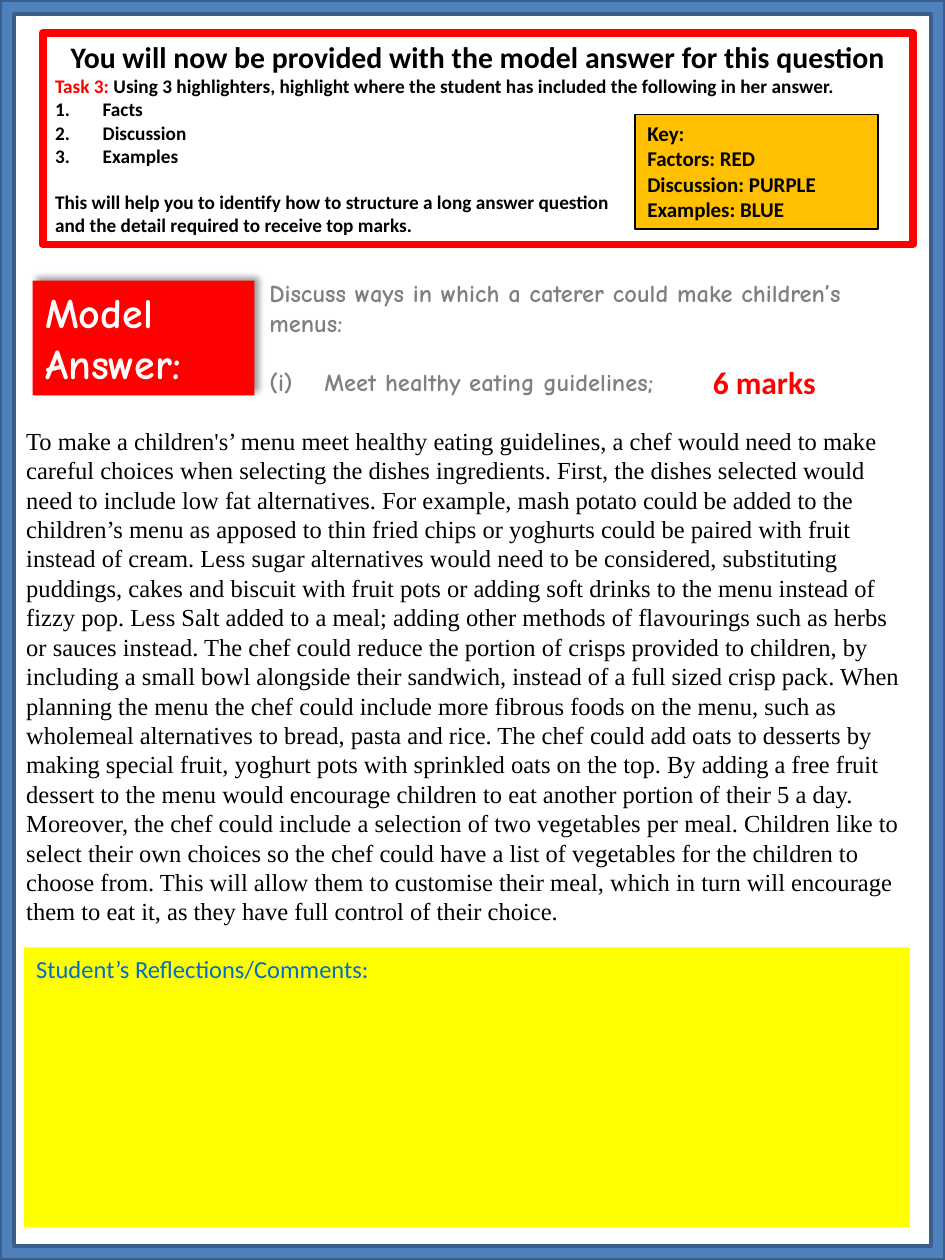
from lxml import etree
from pptx import Presentation
from pptx.dml.color import RGBColor
from pptx.enum.shapes import MSO_SHAPE
from pptx.enum.text import MSO_ANCHOR, PP_ALIGN
from pptx.oxml.ns import qn
from pptx.util import Cm, Pt

RECT, FRAME = MSO_SHAPE.RECTANGLE, MSO_SHAPE.FRAME
TOP = MSO_ANCHOR.TOP
LEFT, CENTER = PP_ALIGN.LEFT, PP_ALIGN.CENTER

BLACK = RGBColor(0x00, 0x00, 0x00)
WHITE = RGBColor(0xFF, 0xFF, 0xFF)
RED = RGBColor(0xFF, 0x00, 0x00)
GREY = RGBColor(0x80, 0x80, 0x80)
AMBER = RGBColor(0xFF, 0xC0, 0x00)
YELLOW = RGBColor(0xFF, 0xFF, 0x00)
BLUE = RGBColor(0x00, 0x70, 0xC0)
FRAME_FILL = RGBColor(0x4F, 0x81, 0xBD)
FRAME_LINE = RGBColor(0x3A, 0x5F, 0x8C)

prs = Presentation()
prs.slide_width, prs.slide_height = Cm(19.05), Cm(25.4)
s = prs.slides.add_slide(prs.slide_layouts[6])


def add_box(box, fill=None, line=None, line_width=0, kind=RECT):
    sp = s.shapes.add_shape(kind, *[Cm(v) for v in box])
    sp.shadow.inherit = False
    if fill is None:
        sp.fill.background()
    else:
        sp.fill.solid()
        sp.fill.fore_color.rgb = fill
    if line is None:
        sp.line.fill.background()
    else:
        sp.line.color.rgb = line
        sp.line.width = Pt(line_width)
    return sp


def write(sp, paragraphs, font, size, color, bold=False):
    """Each paragraph is a dict: text or runs, and optional formats."""
    tf = sp.text_frame
    tf.word_wrap = True
    tf.vertical_anchor = TOP
    for i, item in enumerate(paragraphs):
        p = tf.paragraphs[0] if i == 0 else tf.add_paragraph()
        p.alignment = item.get("align", LEFT)
        p.space_before = Pt(item.get("before", 0))
        if "number" in item:
            pPr = p._p.get_or_add_pPr()
            pPr.set("marL", str(item["indent"]))
            pPr.set("indent", str(-item["indent"]))
            etree.SubElement(pPr, qn("a:buFont"), typeface="+mj-lt")
            etree.SubElement(pPr, qn("a:buAutoNum"), type=item["number"])
        for text, run_color in item.get("runs") or [(item["text"], color)]:
            r = p.add_run()
            r.text = text
            r.font.color.rgb = run_color
            formats = {"name": font, "size": Pt(item.get("size", size)), "bold": bold}
            for name, value in formats.items():
                setattr(r.font, name, value)


# Model answer heading with a soft shadow to the upper right
sp = add_box((0.66, 5.66, 4.47, 2.31), RED)
shadow = etree.SubElement(sp._element.spPr.find(qn("a:effectLst")), qn("a:outerShdw"),
                          blurRad=str(Pt(4)), dist=str(Pt(3)), dir="18900000",
                          algn="bl", rotWithShape="0")
shadow_color = etree.SubElement(shadow, qn("a:srgbClr"), val=str(BLACK))
etree.SubElement(shadow_color, qn("a:alpha"), val="40000")
write(sp, [{"text": "Model Answer:"}], "Comic Neue", 24, WHITE, True)

# Exam question
sp = s.shapes.add_textbox(Cm(5.18), Cm(5.49), Cm(13.13), Cm(2.64))
write(sp, [
    {"text": "Discuss ways in which a caterer could make children’s menus:"},
    {"text": "Meet healthy eating guidelines;", "before": 17,
     "number": "romanLcParenBoth", "indent": Cm(1.11)},
], "Comic Neue", 14, GREY, True)

# Marks available
sp = s.shapes.add_textbox(Cm(14.12), Cm(7.19), Cm(3.23), Cm(1.02))
write(sp, [{"text": "6 marks"}], "Calibri", 18, RED, True)

# Student's answer, one sentence per entry
sentences = [
    "To make a children's’ menu meet healthy eating guidelines, a chef would need to make "
    "careful choices when selecting the dishes ingredients.",
    "First, the dishes selected would need to include low fat alternatives.",
    "For example, mash potato could be added to the children’s menu as apposed to thin fried "
    "chips or yoghurts could be paired with fruit instead of cream.",
    "Less sugar alternatives would need to be considered, substituting puddings, cakes and "
    "biscuit with fruit pots or adding soft drinks to the menu instead of fizzy pop.",
    "Less Salt added to a meal; adding other methods of flavourings such as herbs or sauces "
    "instead.",
    "The chef could reduce the portion of crisps provided to children, by including a small "
    "bowl alongside their sandwich, instead of a full sized crisp pack.",
    "When planning the menu the chef could include more fibrous foods on the menu, such as "
    "wholemeal alternatives to bread, pasta and rice.",
    "The chef could add oats to desserts by making special fruit, yoghurt pots with sprinkled "
    "oats on the top.",
    "By adding a free fruit dessert to the menu would encourage children to eat another "
    "portion of their 5 a day.",
    "Moreover, the chef could include a selection of two vegetables per meal.",
    "Children like to select their own choices so the chef could have a list of vegetables "
    "for the children to choose from.",
    "This will allow them to customise their meal, which in turn will encourage them to eat "
    "it, as they have full control of their choice.",
]
sp = s.shapes.add_textbox(Cm(0.28), Cm(8.46), Cm(18.34), Cm(10.44))
write(sp, [{"text": " ".join(sentences)}], "Times New Roman", 14, BLACK)

# Highlighter key
sp = add_box((12.8, 2.31, 4.9, 2.31), AMBER, BLACK, 0.75)
key = ["Key:", "Factors: RED", "Discussion: PURPLE", "Examples: BLUE"]
write(sp, [{"text": t} for t in key], "Calibri", 12, BLACK, True)

# Reflections area
sp = add_box((0.48, 19.1, 17.86, 5.64), YELLOW)
write(sp, [{"text": "Student’s Reflections/Comments:"}], "Calibri", 14, BLUE)

# Page frame
sp = add_box((0, 0, 19.05, 25.4), FRAME_FILL, FRAME_LINE, 2, FRAME)
sp.adjustments[0] = 0.015

# Task instructions
sp = add_box((0.86, 0.66, 17.55, 4.27), None, RED, 4.5)
task = [
    {"text": "You will now be provided with the model answer for this question",
     "size": 17, "align": CENTER},
    {"runs": [("Task 3: ", RED),
              ("Using 3 highlighters, highlight where the student has included "
               "the following in her answer.", BLACK)]},
]
task += [{"text": t, "number": "arabicPeriod", "indent": Cm(0.96)}
         for t in ("Facts", "Discussion", "Examples")]
task += [
    {"text": "This will help you to identify how to structure a long answer question",
     "before": 13},
    {"text": "and the detail required to receive top marks."},
]
write(sp, task, "Calibri", 11, BLACK, True)

prs.save("out.pptx")
